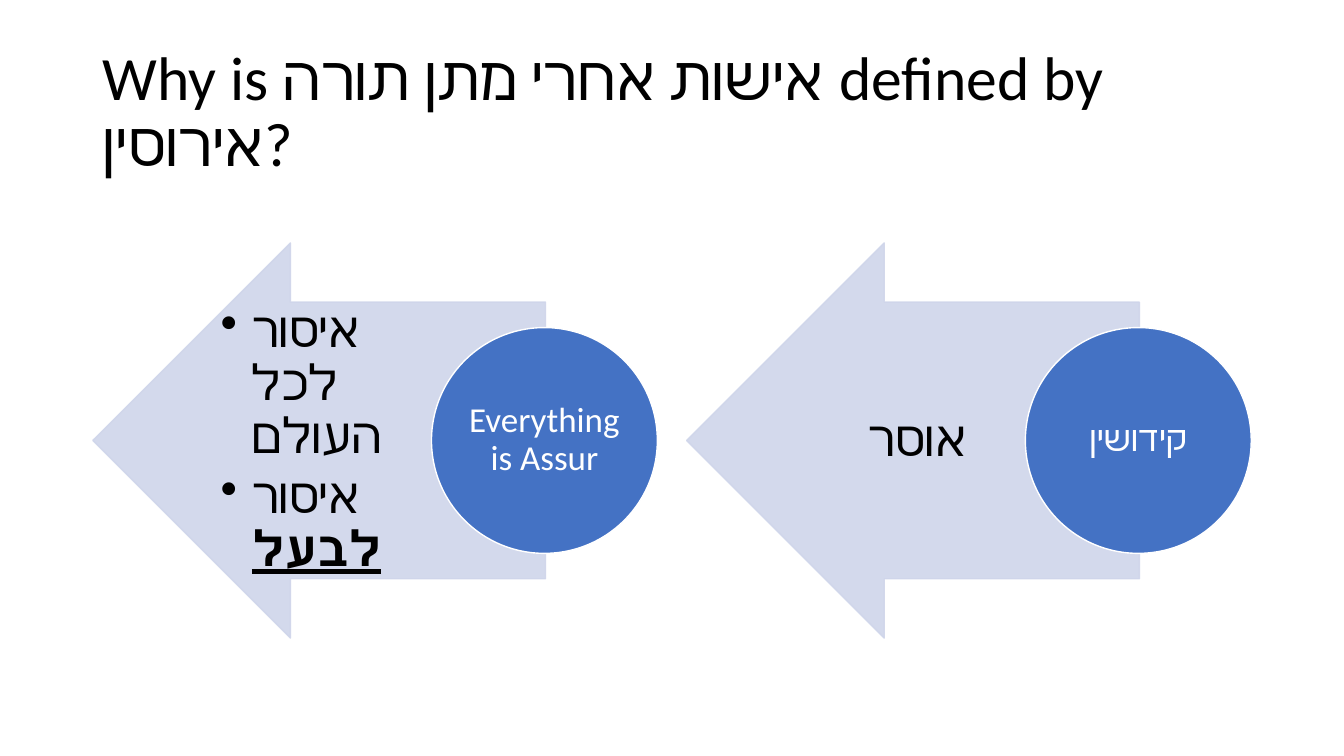
from lxml import etree
from pptx import Presentation
from pptx.dml.color import RGBColor
from pptx.enum.shapes import MSO_SHAPE
from pptx.enum.text import MSO_ANCHOR, PP_ALIGN
from pptx.oxml.ns import qn
from pptx.util import Inches, Pt

ARROW, CIRCLE = MSO_SHAPE.LEFT_ARROW, MSO_SHAPE.OVAL
MIDDLE = MSO_ANCHOR.MIDDLE
LEFT, CENTER = PP_ALIGN.LEFT, PP_ALIGN.CENTER
FONT = "Calibri"
COLORS = {"text": "000000", "arrow": "CFD5EA", "circle": "4472C4", "white": "FFFFFF"}
TITLE = "Why is אישות אחרי מתן תורה defined by אירוסין?"
EMPHASIS = {"bold": True, "underline": True}
LABEL_INSETS = (0.1, 0.02, 0.05, 0.02)
CIRCLE_INSETS = (0.02,) * 4

# Left edge, circle text, arrow paragraphs (each a list of runs), bulleted
STEPS = [
    (6.81, "קידושין", [[("אוסר", {})]], False),
    (0.92, "Everything is Assur",
     [[("איסור לכל העולם", {})], [("איסור ", {}), ("לבעל", EMPHASIS)]], True),
]


def rgb(name):
    return RGBColor.from_string(COLORS[name])


def add_bullet(p):
    pPr = p._p.get_or_add_pPr()
    pPr.set("marL", str(Inches(0.31)))
    pPr.set("indent", str(-Inches(0.31)))
    etree.SubElement(pPr, qn("a:buChar")).set("char", "•")


def write(tf, paragraphs, size, color="text", align=CENTER, after=0,
          insets=(0.1, 0.05, 0.1, 0.05), bulleted=False):
    """Fill a text frame; each paragraph is a list of (text, font values) runs."""
    tf.word_wrap = True
    tf.vertical_anchor = MIDDLE
    for side, inset in zip(("left", "top", "right", "bottom"), insets):
        setattr(tf, f"margin_{side}", Inches(inset))
    for i, runs in enumerate(paragraphs):
        p = tf.add_paragraph() if i else tf.paragraphs[0]
        p.alignment = align
        p.line_spacing = 0.9
        p.space_after = Pt(after)
        if bulleted:
            add_bullet(p)
        for text, extra in runs:
            r = p.add_run()
            r.text = text
            for key, value in {"name": FONT, "size": Pt(size), **extra}.items():
                setattr(r.font, key, value)
            r.font.color.rgb = rgb(color)
            # Hebrew takes its typeface from the complex script font
            etree.SubElement(r._r.get_or_add_rPr(), qn("a:cs")).set("typeface", FONT)


def add_textbox(s, box, paragraphs, size, **options):
    sp = s.shapes.add_textbox(*map(Inches, box))
    write(sp.text_frame, paragraphs, size, **options)


def add_filled(s, kind, box, fill, line):
    sp = s.shapes.add_shape(kind, *map(Inches, box))
    sp.shadow.inherit = False
    sp.fill.solid()
    sp.fill.fore_color.rgb = rgb(fill)
    sp.line.color.rgb = rgb(line)
    sp.line.width = Pt(1)
    return sp


def add_arrow(s, left):
    sp = add_filled(s, ARROW, (left, 2.41, 4.49, 3.92), "arrow", "arrow")
    sp.adjustments[0], sp.adjustments[1] = 0.7, 0.5
    for color in sp._element.spPr.iter(qn("a:srgbClr")):
        etree.SubElement(color, qn("a:alpha")).set("val", "90000")


def add_step(s, left, circle_text, paragraphs, bulleted):
    add_arrow(s, left)
    add_textbox(s, (left + 1.17, 3, 2.19, 2.75), paragraphs, 35,
                align=LEFT if bulleted else CENTER, after=5 if bulleted else 12,
                insets=LABEL_INSETS, bulleted=bulleted)
    circle = add_filled(s, CIRCLE, (left + 3.36, 3.25, 2.24, 2.24), "circle", "white")
    write(circle.text_frame, [[(circle_text, {})]], 25, color="white",
          after=9, insets=CIRCLE_INSETS)


def main():
    prs = Presentation()
    prs.slide_width, prs.slide_height = Inches(13.33), Inches(7.5)
    s = prs.slides.add_slide(prs.slide_layouts[6])
    add_textbox(s, (0.92, 0.4, 11.5, 1.45), [[(TITLE, {})]], 44, align=LEFT)
    for step in STEPS:
        add_step(s, *step)
    prs.save("out.pptx")


if __name__ == "__main__":
    main()
